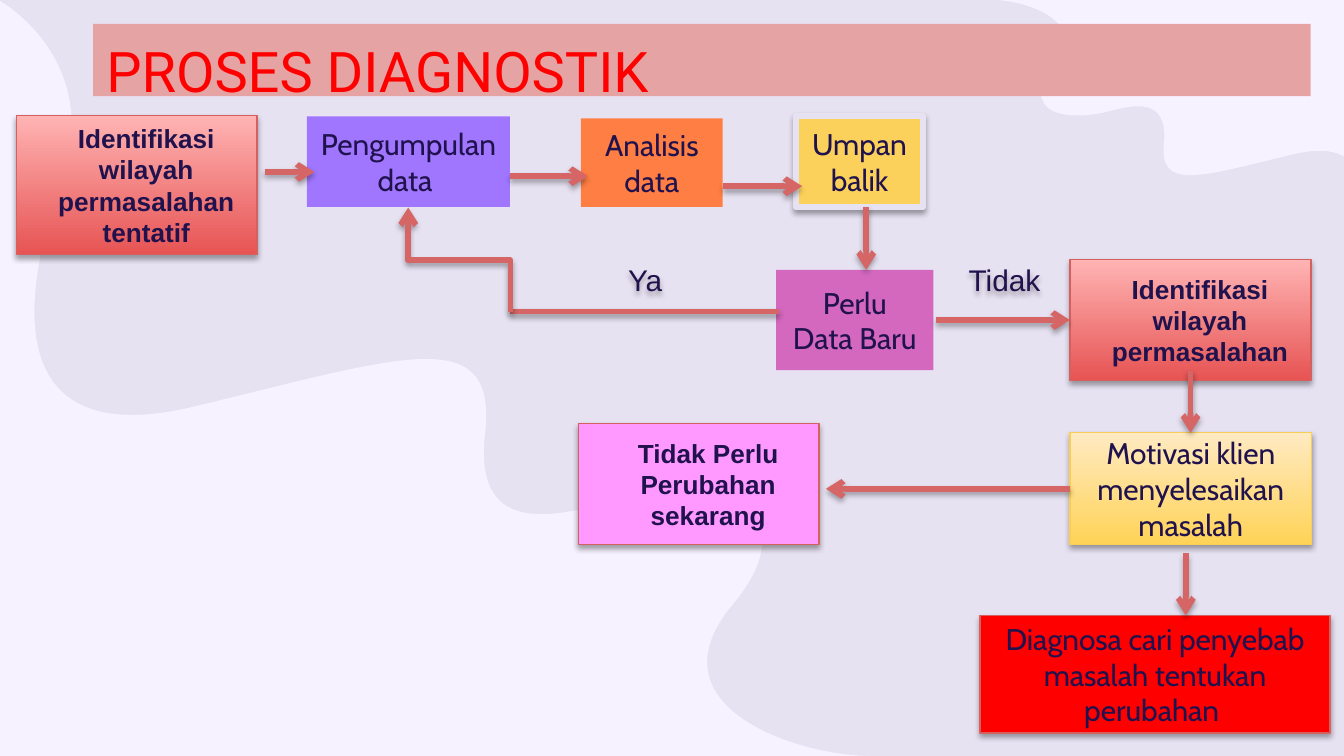
from pptx import Presentation
from pptx.dml.color import RGBColor as Rgb
from pptx.enum.shapes import MSO_CONNECTOR as Conn, MSO_SHAPE as Kind
from pptx.enum.text import MSO_ANCHOR as Anchor, PP_ALIGN as Align
from pptx.oxml import parse_xml
from pptx.oxml.ns import nsdecls, qn
from pptx.util import Cm, Pt

WIDE, HIGH = 25.4, 14.29
HEX = {
    "back": "E7E2F2", "wave": "F6F2FF", "bar": "E6A3A3", "red": "FF0000",
    "ink": "20124D", "edge": "D46060", "arrow": "D66565", "rose": "E75454",
    "blush": "FFB3B3", "violet": "A076FF", "orange": "FF7E43",
    "plum": "D468BF", "gold": "FBD15B", "amber": "FFD357",
    "cream": "FFEAC2", "rim": "F9CE55", "pink": "FF99FF",
}
ROSE = ("rose", "blush")
BOLD = {"font": "Arial", "size": 14, "bold": True, "left": 0.36}

# Each wave: start point, then curves (three points) or lines (one point)
WAVES = [
    ((25.5, 4.8), [
        [(25.76, 4.04), (26.14, 2.51), (24.43, 2.92)],
        [(22.71, 3.33), (21.89, 3.63), (22, 2.69)],
        [(22.07, 1.83), (21.44, 1.98), (20.93, 2.11)],
        [(20.55, 2.21), (19.86, 2.26), (19.71, 1.91)],
        [(19.63, 1.75), (19.66, 1.55), (19.94, 1.24)],
        [(20.62, 0.41), (19.38, 0), (18.77, 0)],
        [(26.04, 0)], [(26.04, 6.3)],
        [(26.04, 6.3), (25.2, 5.84), (25.5, 4.8)]]),
    ((1.19, 3.38), [
        [(0.53, 5.13), (-0.23, 8.59), (3.61, 7.7)],
        [(7.54, 6.76), (9.4, 6.05), (9.17, 8.18)],
        [(8.94, 10.13), (10.41, 9.78), (11.53, 9.5)],
        [(12.45, 9.25), (14, 9.14), (14.35, 9.98)],
        [(14.48, 10.31), (14.38, 10.8), (13.82, 11.46)],
        [(12.27, 13.36), (15.06, 14.29), (16.46, 14.29)],
        [(-0.03, 14.29)], [(-0.03, 0)],
        [(-0.03, 0), (1.93, 1.07), (1.19, 3.38)]]),
]

# Text, place, fill, edge, edge width, shadow, text format
BOXES = [
    ("Identifikasi wilayah permasalahan tentatif", (0.31, 2.19, 4.55, 2.62),
     ROSE, "edge", 0.75, True, BOLD),
    ("Pengumpulan data ", (5.8, 2.2, 3.84, 1.71),
     "violet", None, 0, False, {}),
    ("Analisis data", (10.98, 2.24, 2.68, 1.67), "orange", None, 0, False, {}),
    ("Perlu Data Baru", (14.67, 5.1, 2.97, 1.9),
     "plum", None, 0, False, {"inset": 0.3}),
    ("Umpan balik", (15.04, 2.19, 2.41, 1.73), "gold", "back", 3, True, {}),
    ("Identifikasi wilayah permasalahan", (20.22, 4.91, 4.56, 2.28),
     ROSE, "edge", 0.75, True, BOLD),
    ("Motivasi klien menyelesaikan masalah", (20.22, 8.18, 4.57, 2.11),
     ("amber", "cream"), "rim", 0.75, True, {}),
    ("Diagnosa cari penyebab masalah tentukan perubahan ",
     (18.52, 11.63, 6.62, 2.23), "red", "edge", 0.75, True, {}),
    ("Tidak Perlu Perubahan sekarang", (10.93, 8.01, 4.55, 2.28),
     "pink", "edge", 0.75, True, BOLD),
]
ARROWS = [
    (5, 3.25, 5.94, 3.25), (9.64, 3.33, 11.11, 3.33),
    (13.67, 3.52, 15.16, 3.52), (16.37, 3.91, 16.37, 5.1),
    (17.69, 6.05, 20.22, 6.05), (22.5, 7.01, 22.5, 8.18),
    (22.41, 10.46, 22.41, 11.63), (20.22, 9.24, 15.61, 9.24),
]


def tint(name):
    return Rgb.from_string(HEX[name])


def shade(shape):
    """Give a shape or connector a soft shadow below it."""
    props = shape.element.spPr
    for old in props.findall(qn("a:effectLst")):
        props.remove(old)
    props.append(parse_xml(
        f'<a:effectLst {nsdecls("a")}><a:outerShdw blurRad="{Pt(3.1)}" '
        f'dist="{Pt(1.8)}" dir="5400000" algn="t" rotWithShape="0">'
        '<a:srgbClr val="000000"><a:alpha val="35000"/></a:srgbClr>'
        '</a:outerShdw></a:effectLst>'))


def write(shape, text, font="Cabin", size=16, color="ink", bold=False,
          align=Align.CENTER, anchor=Anchor.MIDDLE, left=0, inset=0.25):
    frame = shape.text_frame
    frame.word_wrap = True
    frame.vertical_anchor = anchor
    frame.margin_left = frame.margin_right = Cm(inset)
    frame.margin_top = frame.margin_bottom = Cm(min(inset, 0.25))
    para = frame.paragraphs[0]
    para.alignment = align
    if left:
        props = para._p.get_or_add_pPr()
        props.set("marL", str(Cm(left)))
        props.set("indent", "0")
    run = para.add_run()
    run.text = text
    run.font.name, run.font.size, run.font.bold = font, Pt(size), bold
    run.font.color.rgb = tint(color)


def add_box(slide, place, fill=None, edge=None, width=0, soft=False,
            kind=Kind.RECTANGLE):
    box = slide.shapes.add_shape(kind, *map(Cm, place))
    box.shadow.inherit = False
    if isinstance(fill, tuple):
        box.fill.gradient()
        box.fill.gradient_angle = 90
        for stop, name in zip(box.fill.gradient_stops, fill):
            stop.color.rgb = tint(name)
            stop.position = fill.index(name)
    elif fill:
        box.fill.solid()
        box.fill.fore_color.rgb = tint(fill)
    else:
        box.fill.background()
    if edge:
        box.line.color.rgb = tint(edge)
        box.line.width = Pt(width)
    else:
        box.line.fill.background()
    if soft:
        shade(box)
    return box


def add_line(slide, ends, kind=Conn.STRAIGHT, head=True):
    line = slide.shapes.add_connector(kind, *map(Cm, ends))
    line.line.color.rgb = tint("arrow")
    line.line.width = Pt(3)
    if head:
        line.line._get_or_add_ln().append(
            parse_xml(f'<a:tailEnd {nsdecls("a")} type="arrow"/>'))
    shade(line)
    return line


def add_wave(slide, start, parts):
    pen = slide.shapes.build_freeform(*map(Cm, start))
    pen.add_line_segments([tuple(map(Cm, part[-1])) for part in parts],
                          close=True)
    wave = pen.convert_to_shape()
    # Bend the straight segments that have control points
    for seg, part in zip(list(wave.element.iter(qn("a:lnTo"))), parts):
        if len(part) == 3:
            dots = "".join(
                f'<a:pt x="{Cm(x) - wave.left}" y="{Cm(y) - wave.top}"/>'
                for x, y in part)
            seg.getparent().replace(seg, parse_xml(
                f'<a:cubicBezTo {nsdecls("a")}>{dots}</a:cubicBezTo>'))
    wave.shadow.inherit = False
    wave.fill.solid()
    wave.fill.fore_color.rgb = tint("wave")
    wave.line.fill.background()


def main():
    deck = Presentation()
    deck.slide_width, deck.slide_height = Cm(WIDE), Cm(HIGH)
    slide = deck.slides.add_slide(deck.slide_layouts[6])

    # Background
    slide.background.fill.solid()
    slide.background.fill.fore_color.rgb = tint("back")
    for start, parts in WAVES:
        add_wave(slide, start, parts)

    # Title
    bar = add_box(slide, (1.76, 0.45, 23.01, 1.37), "bar")
    write(bar, "PROSES DIAGNOSTIK", font="Roboto", size=30, color="red",
          align=Align.LEFT, anchor=Anchor.TOP)

    # Steps
    for text, place, fill, edge, width, soft, form in BOXES:
        write(add_box(slide, place, fill, edge, width, soft), text, **form)

    # Arrows
    for ends in ARROWS:
        add_line(slide, ends)

    # Loop back to data collection, turned to leave upwards
    add_line(slide, (14.73, 5.89, 9.64, 5.89), head=False)
    bend = add_line(slide, (7.69, 5.88, 9.67, 3.95), Conn.ELBOW)
    bend.element.spPr.find(qn("a:xfrm")).set("rot", "16200000")

    # Answers
    for text, place in (("Ya", (11.18, 4.8, 2.03, 0.97)),
                        ("Tidak", (17.45, 4.8, 3.07, 0.97))):
        oval = add_box(slide, place, soft=True, kind=Kind.OVAL)
        write(oval, text, font="Arial", inset=0.1)

    deck.save("out.pptx")


main()
